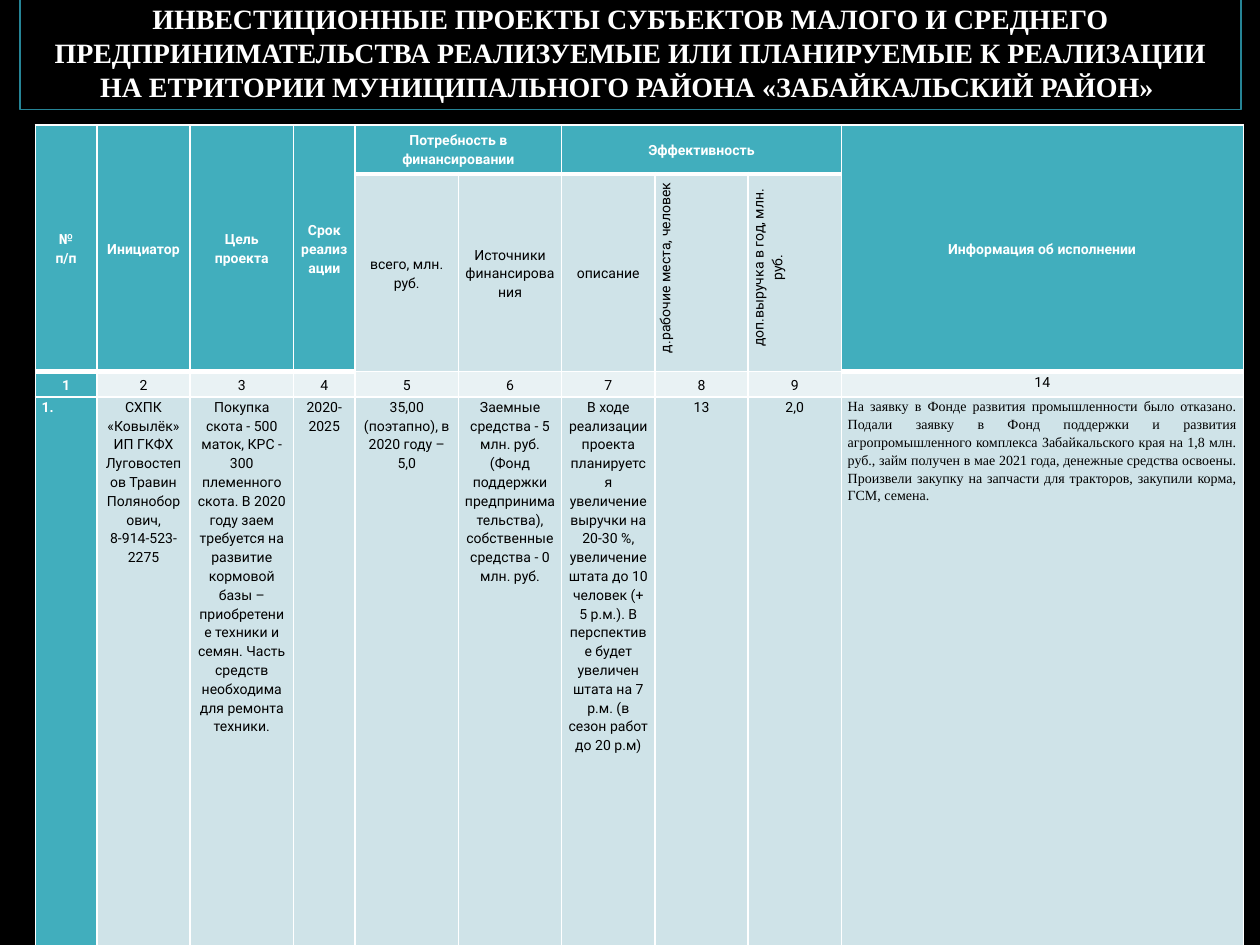
from lxml.etree import SubElement
from pptx import Presentation
from pptx.dml.color import RGBColor
from pptx.enum.text import MSO_ANCHOR, MSO_AUTO_SIZE, PP_ALIGN
from pptx.oxml.ns import qn
from pptx.util import Inches, Pt

WHITE, BLACK = "FFFFFF", "000000"
TEAL, PALE, LIGHT = "41AEBD", "CFE3E8", "E9F2F4"
SANS, SERIF = "Roboto", "Times New Roman"

COL_WIDTHS = [0.49, 0.74, 0.82, 0.49, 0.82, 0.82, 0.74, 0.74, 0.74, 3.19]
ROW_HEIGHTS = [0.39, 0.82, 0.2, 4.9]

TITLE = ("ИНВЕСТИЦИОННЫЕ ПРОЕКТЫ СУБЪЕКТОВ МАЛОГО И СРЕДНЕГО ПРЕДПРИНИМАТЕЛЬСТВА "
         "РЕАЛИЗУЕМЫЕ ИЛИ ПЛАНИРУЕМЫЕ К РЕАЛИЗАЦИИ НА ЕТРИТОРИИ МУНИЦИПАЛЬНОГО "
         "РАЙОНА «ЗАБАЙКАЛЬСКИЙ РАЙОН» ")

# column, rows spanned, columns spanned, text
HEADERS = [
    (0, 2, 1, "№\nп/п"),
    (1, 2, 1, "Инициатор"),
    (2, 2, 1, "Цель проекта"),
    (3, 2, 1, "Срок реализации"),
    (4, 1, 2, "Потребность в финансировании"),
    (6, 1, 3, "Эффективность"),
    (9, 2, 1, "Информация об исполнении"),
]
SUBHEADERS = ["всего, млн.\nруб.", "Источники финансирования", "описание",
              "д.рабочие места, человек", "доп.выручка в год, млн. руб."]
NUMBERS = ["1", "2", "3", "4", "5", "6", "7", "8", "9", "14"]
PROJECT = [
    "1.",
    "СХПК «Ковылёк»\vИП ГКФХ Луговостепов Травин Поляноборович,\v8-914-523-2275",
    "Покупка скота - 500 маток, КРС - 300 племенного скота. В 2020 году заем "
    "требуется на развитие кормовой базы – приобретение техники и семян. "
    "Часть средств необходима для ремонта техники.",
    "2020-2025",
    "35,00\n(поэтапно), в 2020 году – 5,0",
    "Заемные средства - 5 млн. руб. (Фонд поддержки предпринимательства), "
    "собственные средства - 0 млн. руб.",
    "В ходе реализации проекта планируется увеличение выручки на 20-30 %, "
    "увеличение штата до 10 человек (+ 5 р.м.). В перспективе будет увеличен "
    "штата на 7 р.м. (в сезон работ до 20 р.м)",
    "13",
    "2,0",
    "На заявку в Фонде развития промышленности было отказано. Подали заявку в Фонд "
    "поддержки и развития агропромышленного комплекса Забайкальского края на "
    "1,8 млн. руб., займ получен в мае 2021 года, денежные средства освоены. "
    "Произвели закупку на запчасти для тракторов, закупили корма, ГСМ, семена.",
]


def rgb(color):
    return RGBColor.from_string(color)


def add_run(p, text, size, font, color, bold):
    r = p.add_run()
    r.text = text
    r.font.size = Pt(size)
    r.font.name = font
    r.font.bold = bold
    r.font.color.rgb = rgb(color)


def add_title(s):
    sp = s.shapes.title
    sp.left, sp.top = Inches(0.16), Inches(-0.04)
    sp.width, sp.height = Inches(9.69), Inches(0.91)
    sp.line.color.rgb = rgb("268496")
    sp.line.width = Pt(0.75)
    tf = sp.text_frame
    tf.word_wrap = True
    tf.auto_size = MSO_AUTO_SIZE.NONE
    tf.vertical_anchor = MSO_ANCHOR.MIDDLE
    p = tf.paragraphs[0]
    p.alignment = PP_ALIGN.CENTER
    add_run(p, TITLE, 16, SERIF, WHITE, True)


def style_cell(cell, fill, bottom=1):
    """Set white borders, with the bottom one of the given width, and the fill."""
    tc_pr = cell._tc.get_or_add_tcPr()
    for side, width in (("L", 1), ("R", 1), ("T", 1), ("B", bottom)):
        ln = SubElement(tc_pr, qn(f"a:ln{side}"), w=str(Pt(width)))
        SubElement(SubElement(ln, qn("a:solidFill")), qn("a:srgbClr"), val=WHITE)
    cell.fill.solid()
    cell.fill.fore_color.rgb = rgb(fill)


def write_cell(cell, text, color=BLACK, bold=False, font=SANS,
               align=PP_ALIGN.CENTER, anchor=MSO_ANCHOR.MIDDLE, indent=0):
    """Write text; a newline starts a paragraph and a vertical tab a line."""
    cell.margin_left = cell.margin_right = Inches(0.05)
    cell.margin_top = cell.margin_bottom = 0
    cell.vertical_anchor = anchor
    tf = cell.text_frame
    for i, paragraph in enumerate(text.split("\n")):
        p = tf.add_paragraph() if i else tf.paragraphs[0]
        p.alignment = align
        p.line_spacing = 1.15
        if indent:
            p._p.get_or_add_pPr().set("marL", str(Inches(indent)))
        for j, line in enumerate(paragraph.split("\v")):
            if j:
                p.add_line_break()
            add_run(p, line, 8, font, color, bold)


def fill_headers(table):
    for col, rows, cols, text in HEADERS:
        cell = table.cell(0, col)
        for row in range(rows):
            for c in range(col, col + cols):
                style_cell(table.cell(row, c), TEAL, bottom=3)
        cell.merge(table.cell(rows - 1, col + cols - 1))
        write_cell(cell, text, WHITE, True)
    for col, text in enumerate(SUBHEADERS, start=4):
        cell = table.cell(1, col)
        style_cell(cell, PALE)
        upright = col >= 7
        write_cell(cell, text, indent=0.08 if upright else 0)
        if upright:
            cell._tc.get_or_add_tcPr().set("vert", "vert270")


def fill_numbers(table):
    last = len(NUMBERS) - 1
    for col, text in enumerate(NUMBERS):
        cell = table.cell(2, col)
        first = col == 0
        style_cell(cell, TEAL if first else LIGHT)
        write_cell(cell, text, WHITE if first else BLACK, first,
                   anchor=MSO_ANCHOR.TOP if col == last else MSO_ANCHOR.MIDDLE)


def fill_project(table):
    special = {
        0: dict(color=WHITE, bold=True, align=PP_ALIGN.LEFT),
        len(PROJECT) - 1: dict(font=SERIF, align=PP_ALIGN.JUSTIFY),
    }
    for col, text in enumerate(PROJECT):
        cell = table.cell(3, col)
        style_cell(cell, PALE if col else TEAL)
        write_cell(cell, text, anchor=MSO_ANCHOR.TOP, **special.get(col, {}))


def add_projects_table(s):
    frame = s.shapes.add_table(len(ROW_HEIGHTS), len(COL_WIDTHS), Inches(0.28),
                               Inches(0.99), Inches(9.57), Inches(6.3))
    table = frame.table
    table.first_row = table.horz_banding = False
    for column, width in zip(table.columns, COL_WIDTHS):
        column.width = Inches(width)
    for row, height in zip(table.rows, ROW_HEIGHTS):
        row.height = Inches(height)
    fill_headers(table)
    fill_numbers(table)
    fill_project(table)


def main():
    prs = Presentation()
    prs.slide_width, prs.slide_height = Inches(10), Inches(7.5)
    s = prs.slides.add_slide(prs.slide_layouts[5])
    s.background.fill.solid()
    s.background.fill.fore_color.rgb = rgb(BLACK)
    add_title(s)
    add_projects_table(s)
    prs.save("out.pptx")


if __name__ == "__main__":
    main()
